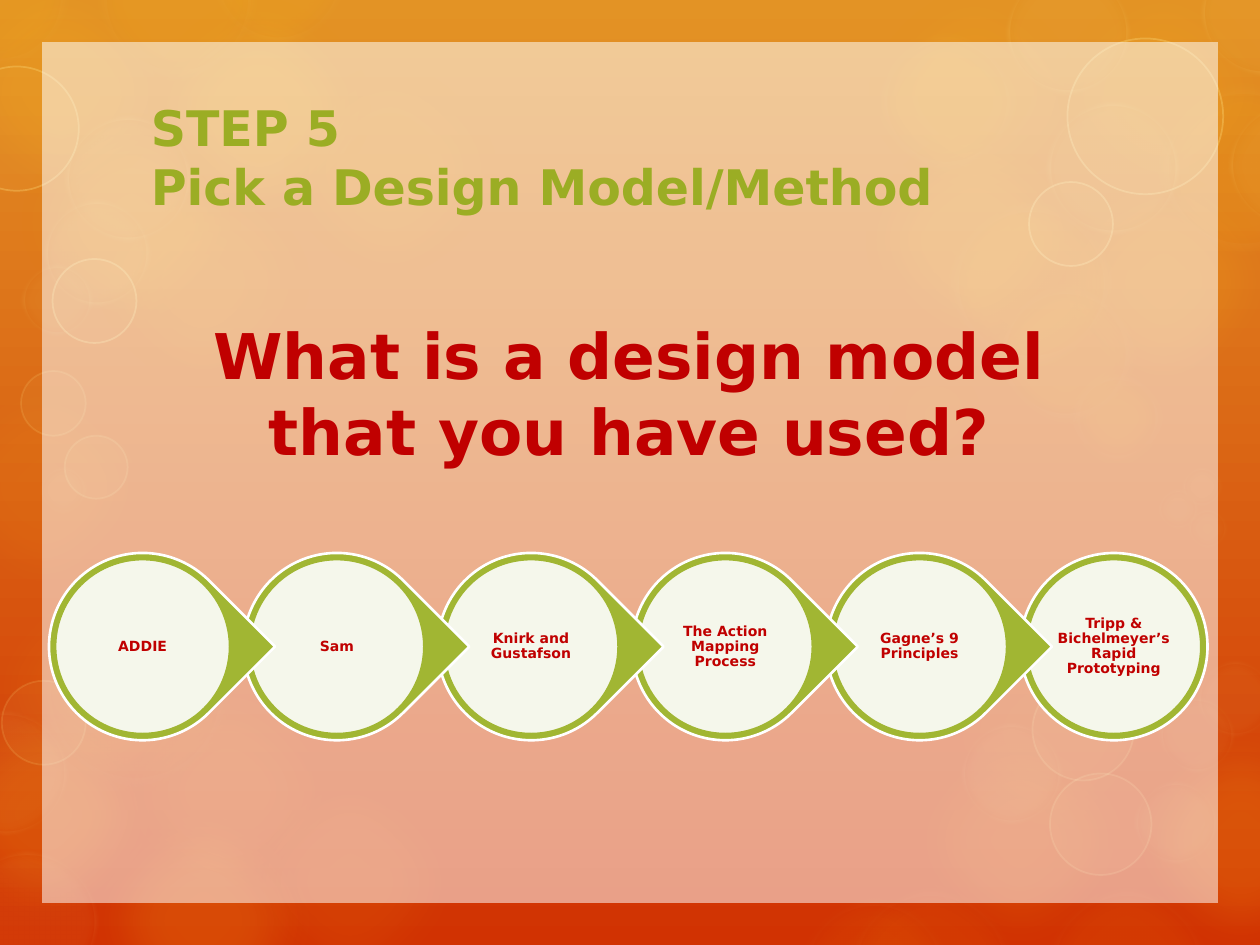
from lxml import etree
from pptx import Presentation
from pptx.dml.color import RGBColor
from pptx.enum.shapes import MSO_SHAPE
from pptx.enum.text import MSO_ANCHOR, MSO_AUTO_SIZE, PP_ALIGN
from pptx.oxml.ns import qn
from pptx.util import Pt

OVAL, TEARDROP, RECTANGLE = MSO_SHAPE.OVAL, MSO_SHAPE.TEAR, MSO_SHAPE.RECTANGLE
LEFT, CENTER, MIDDLE = PP_ALIGN.LEFT, PP_ALIGN.CENTER, MSO_ANCHOR.MIDDLE
FIXED_SIZE = MSO_AUTO_SIZE.NONE
COLORS = {
    "sky": "E39325", "ember": "D13202", "amber": "FDC61B", "cream": "FEEBAE",
    "pale": "FFE281", "white": "FFFFFF", "green": "A1B633", "heading": "9BAD24",
    "red": "C00000",
}
FONT = "DejaVu Sans"
GLOW_SIZE = 150
GLOWS = [
    (-19, 318, 8), (41, 86, 10), (148, 22, 10), (41, 451, 16), (-40, -23, 14),
    (73, -13, 20), (0, 52, 15), (590, -23, 10), (482, -21, 10), (590, 86, 15),
    (634, 405, 16), (525, 343, 5), (-50, 390, 16), (55, 377, 8), (482, 62, 15),
    (508, 405, 10), (125, 429, 8), (-50, 203, 8),
]
HALOS = [
    (10, 6, [(661, 47, 99), (500, 17, 82), (541, 114, 96), (568, 161, 82),
             (610, 210, 57), (54, -47, 94), (118, -54, 82), (-41, -42, 82)]),
    (6, 4, [(22, 341, 110), (454, 511, 91), (482, 505, 99), (596, 505, 96)]),
]
RINGS = [
    (1, 15, [(1, 389, 48), (600, 442, 58), (590, 388, 58), (12, 212, 37),
             (37, 249, 36)]),
    (5, 15, [(-25, 486, 81), (-32, 406, 71), (549, 413, 58), (648, 446, 48),
             (636, 323, 44), (662, 398, 44), (684, 377, 44), (675, 266, 24),
             (661, 279, 24), (678, 290, 24), (22, 266, 28)]),
    (1, 30, [(-26, 38, 71), (30, 148, 48), (610, 22, 89), (588, 104, 48)]),
    (5, 30, [(37, 66, 72), (25, 114, 61), (12, 151, 41), (575, -17, 71),
             (686, -28, 71), (702, 59, 71), (598, 58, 76)]),
]
MODELS = ["ADDIE", "Sam", "Knirk and Gustafson", "The Action Mapping Process",
          "Gagne’s 9 Principles", "Tripp & Bichelmeyer’s Rapid Prototyping"]
CHAIN_LEFT, CHAIN_TOP, CHAIN_STEP = 28, 316, 111
DROP_SIZE, DISC_SIZE, LABEL_SIZE = 107, 100, 71


class SlideStyle:
    """Holds the style and the current slide, and draws each kind of element."""

    def __init__(self, slide):
        self.slide = slide

    def color(self, name):
        return RGBColor.from_string(COLORS[name])

    def background(self, top, bottom):
        fill = self.slide.background.fill
        fill.gradient()
        fill.gradient_angle = 270
        for stop, name, position in zip(fill.gradient_stops, (top, bottom), (0, 1)):
            stop.color.rgb = self.color(name)
            stop.position = position

    def set_alpha(self, parent, percent):
        color = parent.find(qn("a:solidFill"))[0]
        etree.SubElement(color, qn("a:alpha")).set("val", str(percent * 1000))

    def shape(self, kind, box, fill, alpha=100, line=None, width=1.5,
              line_alpha=100, soft=0, rotation=0):
        shape = self.slide.shapes.add_shape(kind, *map(Pt, box))
        shape.rotation = rotation
        shape.shadow.inherit = False
        shape.fill.solid()
        shape.fill.fore_color.rgb = self.color(fill)
        properties = shape._element.spPr
        if alpha < 100:
            self.set_alpha(properties, alpha)
        if line:
            shape.line.color.rgb = self.color(line)
            shape.line.width = Pt(width)
            if line_alpha < 100:
                self.set_alpha(properties.find(qn("a:ln")), line_alpha)
        else:
            shape.line.fill.background()
        if soft:
            effects = properties.find(qn("a:effectLst"))
            etree.SubElement(effects, qn("a:softEdge")).set("rad", str(Pt(soft)))

    def bubble(self, left, top, size, fill, **look):
        self.shape(OVAL, (left, top, size, size), fill, **look)

    def format_text(self, frame, text, size, color, align):
        frame.word_wrap = True
        frame.auto_size = FIXED_SIZE
        frame.vertical_anchor = MIDDLE
        frame.text = text
        paragraph = frame.paragraphs[0]
        paragraph.alignment = align
        paragraph.font.name = FONT
        paragraph.font.size = Pt(size)
        paragraph.font.bold = True
        paragraph.font.color.rgb = self.color(color)
        return paragraph

    def placeholder(self, index, box, text, size, color, align):
        shape = self.slide.placeholders[index]
        shape.left, shape.top, shape.width, shape.height = map(Pt, box)
        return self.format_text(shape.text_frame, text, size, color, align)

    def title(self, box, text):
        self.placeholder(0, box, text, 28, "heading", LEFT)

    def question(self, box, text):
        paragraph = self.placeholder(1, box, text, 36, "red", CENTER)
        paragraph.space_after = Pt(6)
        properties = paragraph._p.get_or_add_pPr()
        properties.set("marL", "0")
        properties.set("indent", "0")
        etree.SubElement(properties, qn("a:buNone"))
        properties.append(properties.find(qn("a:defRPr")))

    def label(self, box, text):
        frame = self.slide.shapes.add_textbox(*map(Pt, box)).text_frame
        frame.margin_left = frame.margin_right = Pt(1)
        frame.margin_top = frame.margin_bottom = Pt(1)
        self.format_text(frame, text, 8, "red", CENTER).line_spacing = 0.9

    def chain_link(self, left, text, last):
        def centered(size):
            inset = (DROP_SIZE - size) / 2
            return left + inset, CHAIN_TOP + inset, size, size

        self.shape(OVAL if last else TEARDROP, centered(DROP_SIZE), "green",
                   line="white", rotation=0 if last else 45)
        self.shape(OVAL, centered(DISC_SIZE), "white", alpha=90, line="green")
        self.label(centered(LABEL_SIZE), text)


def main():
    presentation = Presentation()
    presentation.slide_width, presentation.slide_height = Pt(720), Pt(540)
    slide = presentation.slides.add_slide(presentation.slide_layouts[1])
    style = SlideStyle(slide)
    style.background("sky", "ember")
    for left, top, alpha in GLOWS:
        style.bubble(left, top, GLOW_SIZE, "amber", alpha=alpha, soft=25)
    style.bubble(486, 189, 96, "amber", alpha=10, soft=25)
    for alpha, line_alpha, bubbles in HALOS:
        for bubble in bubbles:
            style.bubble(*bubble, "amber", alpha=alpha, line="cream", width=14,
                         line_alpha=line_alpha, soft=12)
    for width, line_alpha, bubbles in RINGS:
        for bubble in bubbles:
            style.bubble(*bubble, "pale", alpha=5, line="pale", width=width,
                         line_alpha=line_alpha, soft=5 if width > 1 else 0)
    style.shape(RECTANGLE, (24, 24, 672, 492), "white", alpha=53)
    for shape in list(slide.placeholders):
        slide.shapes._spTree.append(shape._element)
    style.title((79, 53, 561, 73), "STEP 5 \vPick a Design Model/Method")
    style.question((79, 142.5, 561, 163.5), "What is a design model that you have used?")
    last = len(MODELS) - 1
    for index, model in reversed(list(enumerate(MODELS))):
        style.chain_link(CHAIN_LEFT + index * CHAIN_STEP, model, index == last)
    presentation.save("out.pptx")


if __name__ == "__main__":
    main()
